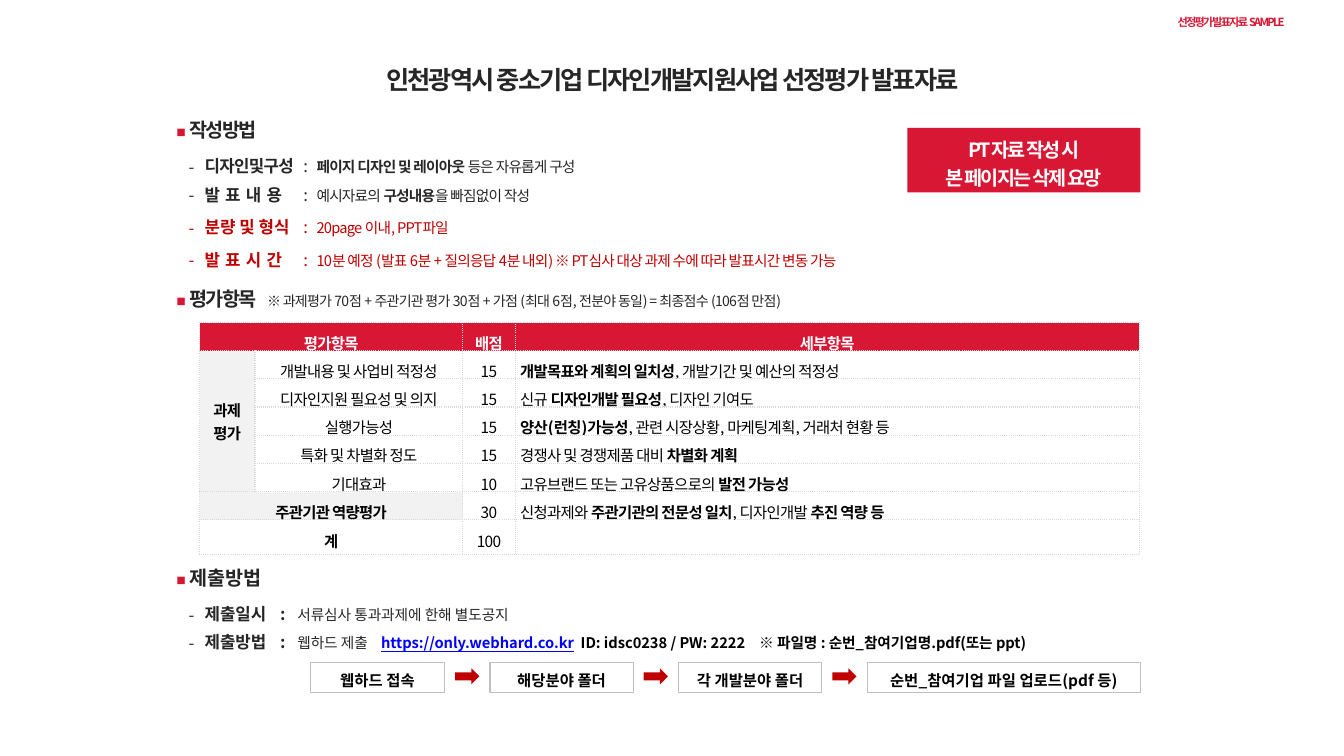
from lxml import etree
from pptx import Presentation
from pptx.dml.color import RGBColor
from pptx.enum import shapes, text
from pptx.oxml import parse_xml
from pptx.oxml.ns import nsdecls, qn
from pptx.util import Inches, Pt

FONT = "Noto Sans CJK KR"
COLORS = {"red": "D71733", "dark_red": "C00000", "ink": "262626", "black": "000000",
          "white": "FFFFFF", "gray": "F2F2F2", "rule": "D9D9D9", "edge": "BFBFBF",
          "link": "0000FF"}


def style(size, color="ink", bold=False, spacing=0.0, underline=False):
    return {"size": size, "color": color, "bold": bold, "spacing": spacing,
            "underline": underline}


STYLES = {
    "title": style(18, bold=True, spacing=-1.3),
    "tag": style(8, "red", True, -1.3),
    "callout": style(14, "white", True, -1.3),
    "heading": style(14, bold=True, spacing=-1.3),
    "wide_heading": style(14, bold=True),
    "label": style(12, bold=True, spacing=-0.5),
    "spread_label": style(12, bold=True, spacing=0.5),
    "colon": style(12, spacing=-0.5),
    "body": style(10.5, spacing=-0.5),
    "strong": style(10.5, bold=True, spacing=-0.5),
    "note": style(10, spacing=-0.5),
    "red_label": style(12, "dark_red", True),
    "red_spread": style(12, "dark_red", True, 0.5),
    "red_colon": style(12, "dark_red", spacing=-0.5),
    "red_body": style(10.5, "dark_red", spacing=-0.5),
    "send_label": style(12, bold=True),
    "send_body": style(10.5),
    "link": style(10.5, "link", True, underline=True),
    "account": style(10.5, "black", True),
    "step": style(11, "black", True),
    "head_cell": style(11, "white", True, -0.5),
    "cell": style(11, "black", False, -0.5),
    "bold_cell": style(11, "black", True, -0.5),
}

TITLE = "인천광역시 중소기업 디자인개발지원사업 선정평가 발표자료"
TAG = "선정평가 발표자료 SAMPLE"
CALLOUT = ["PT자료 작성 시", "본 페이지는 삭제 요망"]

# bullet: character, colour, left margin, hanging indent
SQUARE = ("◾", "red", 0.13, 0.13)
DASH = ("-", "ink", 0.28, 0.16)
RED_DASH = ("-", "dark_red", 0.28, 0.16)

# section: box, paragraphs of (bullet, line spacing, space before, tab stops, runs)
WRITING_TABS, SENDING_TABS = [1.26, 1.39], [1.03, 1.2, 2.03, 4.01, 5.78]
SECTIONS = [
    ((1.63, 0.92, 9.16, 1.89), [
        (SQUARE, 1.5, 0, [], [("작성방법", "heading")]),
        (DASH, 1.5, 3, WRITING_TABS, [
            ("디자인및구성", "label"), ("\t:\t", "colon"),
            ("페이지 디자인 및 레이아웃 ", "strong"), ("등은 자유롭게 구성", "body")]),
        (DASH, 1.2, 3, WRITING_TABS, [
            ("발 표 내 용", "spread_label"), ("\t:\t", "colon"), ("예시자료의 ", "body"),
            ("구성내용", "strong"), ("을 빠짐없이 작성", "body")]),
        (RED_DASH, 1.2, 6, WRITING_TABS, [
            ("분량 및 형식", "red_label"), ("\t:\t", "red_colon"),
            ("20page 이내, PPT파일", "red_body")]),
        (RED_DASH, 1.2, 6, WRITING_TABS, [
            ("발 표 시 간", "red_spread"), ("\t:\t", "red_colon"),
            ("10분 예정 (발표 6분 + 질의응답 4분 내외) "
             "※ PT심사 대상 과제 수에 따라 발표시간 변동 가능", "red_body")]),
    ]),
    ((1.63, 2.73, 9.53, 0.47), [
        (SQUARE, 1, 0, [0.9], [
            ("평가항목", "heading"),
            ("\t※ 과제평가 70점 + 주관기관 평가 30점 + 가점 (최대 6점, 전분야 동일)"
             " = 최종점수 (106점 만점)", "note")]),
    ]),
    ((1.63, 5.48, 9.16, 1.01), [
        (SQUARE, 1.5, 0, [], [("제출방법", "wide_heading")]),
        (DASH, 1.5, 3, SENDING_TABS, [
            ("제출일시\t:\t", "send_label"), ("서류심사 통과과제에 한해 별도공지", "send_body")]),
        (DASH, 1.2, 3, SENDING_TABS, [
            ("제출방법\t:\t", "send_label"), ("웹하드 제출\t", "send_body"),
            ("https://only.webhard.co.kr", "link"),
            ("\tID: idsc0238 / PW: 2222\t※ 파일명 : 순번_참여기업명.pdf(또는 ppt)", "account")]),
    ]),
]

# ** switches bold on and off
CRITERIA = [
    ["**평가항목", "", "**배점", "**세부항목"],
    ["**과제\n평가", "개발내용 및 사업비 적정성", "15", "**개발목표와 계획의 일치성**, 개발기간 및 예산의 적정성"],
    ["", "디자인지원 필요성 및 의지", "15", "신규 **디자인개발 필요성**, 디자인 기여도"],
    ["", "실행가능성", "15", "**양산(런칭)가능성**, 관련 시장상황, 마케팅계획, 거래처 현황 등"],
    ["", "특화 및 차별화 정도", "15", "경쟁사 및 경쟁제품 대비 **차별화 계획"],
    ["", "기대효과", "10", "고유브랜드 또는 고유상품으로의 **발전 가능성"],
    ["**주관기관 역량평가", "", "30", "신청과제와 **주관기관의 전문성 일치**, 디자인개발 **추진 역량 등"],
    ["**계", "", "100", ""],
]
MERGES = [((0, 0), (0, 1)), ((1, 0), (5, 0)), ((6, 0), (6, 1)), ((7, 0), (7, 1))]
COLUMN_WIDTHS = [0.55, 2.06, 0.52, 6.19]
ROW_HEIGHTS = [0.27] + [0.28] * 6 + [0.29]

STEPS = [("웹하드 접속", 1.33), ("해당분야 폴더", 1.42), ("각 개발분야 폴더", 1.42),
         ("순번_참여기업 파일 업로드(pdf 등)", 2.71)]
STEP_LEFT, STEP_TOP, STEP_HEIGHT, STEP_GAP = 3.08, 6.57, 0.3, 0.45
ARROW_TOP, ARROW_WIDTH, ARROW_HEIGHT = 6.63, 0.24, 0.16


def rgb(name):
    return RGBColor.from_string(COLORS[name])


def add_runs(paragraph, runs):
    for words, style_name in runs:
        look = STYLES[style_name]
        run = paragraph.add_run()
        run.text = words
        formats = {"name": FONT, "size": Pt(look["size"]), "bold": look["bold"],
                   "underline": look["underline"]}
        for attribute, value in formats.items():
            setattr(run.font, attribute, value)
        run.font.color.rgb = rgb(look["color"])
        properties = run._r.get_or_add_rPr()
        properties.set("spc", str(round(look["spacing"] * 100)))
        etree.SubElement(properties, qn("a:ea")).set("typeface", FONT)


def add_bullet(paragraph, bullet, tabs):
    character, color, margin, hanging = bullet
    properties = paragraph._p.get_or_add_pPr()
    properties.set("marL", str(Inches(margin)))
    properties.set("indent", str(-Inches(hanging)))
    ns = nsdecls("a")
    stops = "".join(f'<a:tab pos="{Inches(tab)}" algn="l"/>' for tab in tabs)
    for xml in (f'<a:buClr {ns}><a:srgbClr val="{COLORS[color]}"/></a:buClr>',
                f'<a:buFont {ns} typeface="{FONT}"/>',
                f'<a:buChar {ns} char="{character}"/>',
                f'<a:tabLst {ns}>{stops}</a:tabLst>'):
        properties.append(parse_xml(xml))


def add_text_box(slide, box, insets=(0.12, 0.06), anchor=text.MSO_ANCHOR.MIDDLE):
    frame = slide.shapes.add_textbox(*map(Inches, box)).text_frame
    frame.word_wrap = True
    frame.vertical_anchor = anchor
    frame.margin_left = frame.margin_right = Inches(insets[0])
    frame.margin_top = frame.margin_bottom = Inches(insets[1])
    return frame


def add_lines(frame, lines, style_name, spacing):
    for i, line in enumerate(lines):
        paragraph = frame.add_paragraph() if i else frame.paragraphs[0]
        paragraph.alignment = text.PP_ALIGN.CENTER
        paragraph.line_spacing = spacing
        add_runs(paragraph, [(line, style_name)])


def add_block(slide, preset, box, fill, edge=None):
    block = slide.shapes.add_shape(preset, *map(Inches, box))
    block.shadow.inherit = False
    block.fill.solid()
    block.fill.fore_color.rgb = rgb(fill)
    if edge:
        block.line.color.rgb = rgb(edge)
        block.line.width = Pt(0.75)
    else:
        block.line.fill.background()
    block.text_frame.vertical_anchor = text.MSO_ANCHOR.TOP
    return block


def add_section(slide, box, paragraphs):
    frame = add_text_box(slide, box)
    for i, (bullet, spacing, before, tabs, runs) in enumerate(paragraphs):
        paragraph = frame.add_paragraph() if i else frame.paragraphs[0]
        paragraph.line_spacing = spacing
        paragraph.space_before = Pt(before)
        add_bullet(paragraph, bullet, tabs)
        add_runs(paragraph, runs)


def fill_cell(cell, words, row, column):
    cell.vertical_anchor = text.MSO_ANCHOR.MIDDLE
    for side in ("left", "right", "top", "bottom"):
        setattr(cell, f"margin_{side}", Inches(0.02))
    is_detail = row > 0 and column == 3
    if is_detail:
        cell.margin_left = Inches(0.05)
    for i, line in enumerate(words.split("\n")):
        paragraph = cell.text_frame.add_paragraph() if i else cell.text_frame.paragraphs[0]
        paragraph.alignment = text.PP_ALIGN.JUSTIFY if is_detail else text.PP_ALIGN.CENTER
        paragraph.line_spacing = 1 if "\n" in words else 1.3
        pieces = [(piece, "head_cell" if row == 0 else "bold_cell" if k % 2 else "cell")
                  for k, piece in enumerate(line.split("**")) if piece]
        if i:
            pieces = [(line, "bold_cell")]
        add_runs(paragraph, pieces or [("", "cell")])
    for side in "LRTB":
        cell._tc.get_or_add_tcPr().append(parse_xml(
            f'<a:ln{side} {nsdecls("a")} w="{Pt(1)}"><a:solidFill><a:srgbClr '
            f'val="{COLORS["rule"]}"/></a:solidFill><a:prstDash val="sysDot"/></a:ln{side}>'))
    cell.fill.solid()
    shaded = column == 0 and row < 7 or (row, column) == (6, 1)
    cell.fill.fore_color.rgb = rgb("red" if row == 0 else "gray" if shaded else "white")


def add_criteria(slide):
    box = (1.98, 3.2, sum(COLUMN_WIDTHS), sum(ROW_HEIGHTS))
    table = slide.shapes.add_table(len(CRITERIA), len(COLUMN_WIDTHS), *map(Inches, box)).table
    table.first_row = table.horz_banding = False
    for column, width in zip(table.columns, COLUMN_WIDTHS):
        column.width = Inches(width)
    for r, values in enumerate(CRITERIA):
        table.rows[r].height = Inches(ROW_HEIGHTS[r])
        for c, words in enumerate(values):
            fill_cell(table.cell(r, c), words, r, c)
    for first, last in MERGES:
        table.cell(*first).merge(table.cell(*last))


def add_steps(slide):
    left = STEP_LEFT
    for i, (words, width) in enumerate(STEPS):
        if i:
            arrow_left = left - (STEP_GAP + ARROW_WIDTH) / 2
            add_block(slide, shapes.MSO_SHAPE.RIGHT_ARROW,
                      (arrow_left, ARROW_TOP, ARROW_WIDTH, ARROW_HEIGHT), "dark_red")
        step = add_block(slide, shapes.MSO_SHAPE.RECTANGLE,
                         (left, STEP_TOP, width, STEP_HEIGHT), "white", "edge")
        add_lines(step.text_frame, [words], "step", 1.2)
        left += width + STEP_GAP


def main():
    deck = Presentation()
    deck.slide_width, deck.slide_height = Inches(13.33), Inches(7.5)
    slide = deck.slides.add_slide(deck.slide_layouts[6])
    add_lines(add_text_box(slide, (2.99, 0.53, 7.36, 0.46)), [TITLE], "title", 1.2)
    tag = add_text_box(slide, (11.5, 0.1, 1.42, 0.24), (0.1, 0.05), text.MSO_ANCHOR.TOP)
    add_lines(tag, [TAG], "tag", 1)
    for box, paragraphs in SECTIONS:
        add_section(slide, box, paragraphs)
    callout = add_block(slide, shapes.MSO_SHAPE.RECTANGLE, (9, 1.27, 2.31, 0.64), "red")
    add_lines(callout.text_frame, CALLOUT, "callout", 1.2)
    add_criteria(slide)
    add_steps(slide)
    deck.save("out.pptx")


if __name__ == "__main__":
    main()
